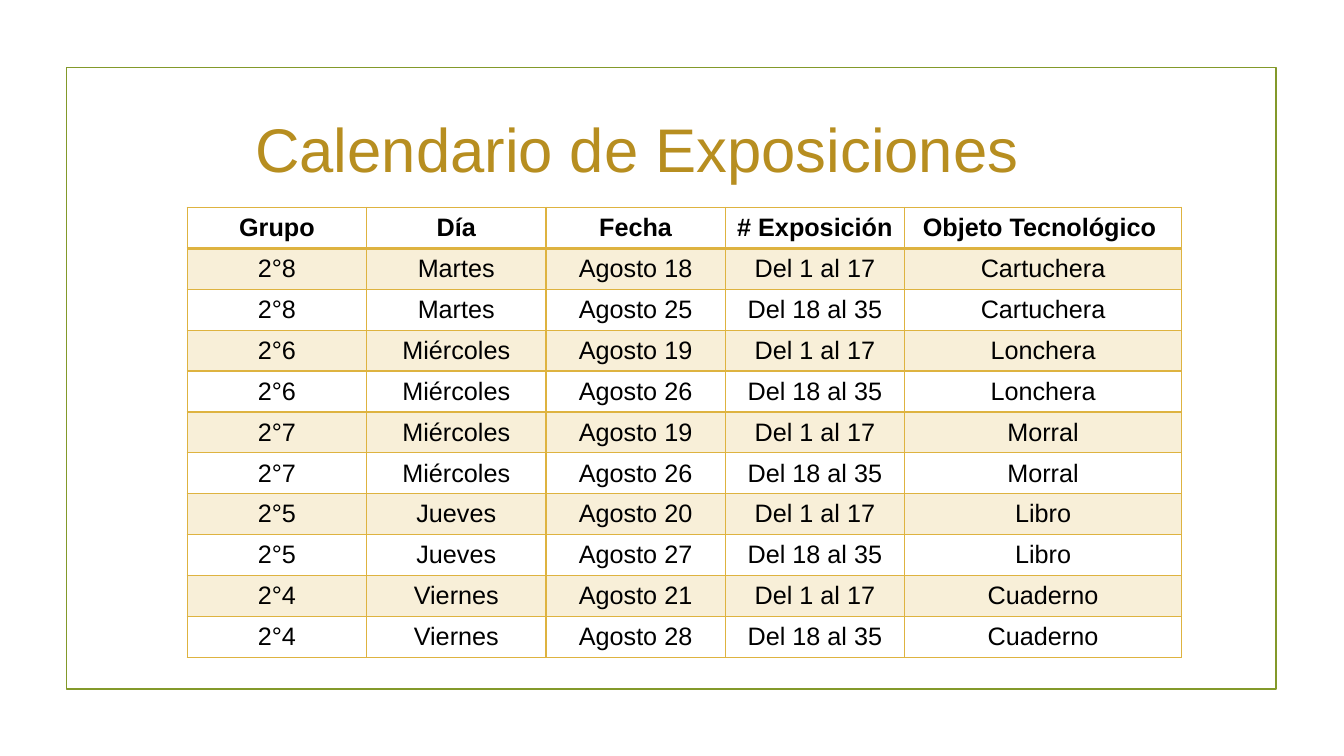
from dataclasses import dataclass

from lxml import etree
from pptx import Presentation
from pptx.dml.color import RGBColor
from pptx.enum import shapes, text
from pptx.oxml.ns import qn
from pptx.util import Cm, Pt

COLORS = {"frame": "83992A", "title": "B78E20", "gold": "DEB340", "text": "000000"}
FONT = "Arial"
HEADS = ("Grupo", "Día", "Fecha", "# Exposición", "Objeto Tecnológico ")
WIDTHS = (4.52, 4.52, 4.52, 4.52, 6.98)
ROW_H = 1.03
TURNS = ((0, "Del 1 al 17"), (7, "Del 18 al 35"))


@dataclass
class Group:
    name: str
    day: str
    date: int
    item: str


GROUPS = (
    Group("2°8", "Martes", 18, "Cartuchera"),
    Group("2°6", "Miércoles", 19, "Lonchera"),
    Group("2°7", "Miércoles", 19, "Morral"),
    Group("2°5", "Jueves", 20, "Libro"),
    Group("2°4", "Viernes", 21, "Cuaderno"),
)


def color(key: str) -> RGBColor:
    return RGBColor.from_string(COLORS[key])


def style(para, size: float, key: str, bold: bool = False) -> None:
    para.alignment = text.PP_ALIGN.CENTER
    para.font.name = FONT
    para.font.size = Pt(size)
    para.font.bold = bold
    para.font.color.rgb = color(key)


def add_edges(cell, top: float, bottom: float) -> None:
    """Draw the four cell borders, one point wide at the sides."""
    props = cell._tc.get_or_add_tcPr()
    edges = (("lnL", 1), ("lnR", 1), ("lnT", top), ("lnB", bottom))
    for spot, (tag, width) in enumerate(edges):
        line = etree.Element(qn(f"a:{tag}"), w=str(Pt(width)))
        fill = etree.SubElement(line, qn("a:solidFill"))
        etree.SubElement(fill, qn("a:srgbClr"), val=COLORS["gold"])
        props.insert(spot, line)


def shade(cell, band: bool) -> None:
    """Tint a banded cell with gold at 20 % opacity; leave others clear."""
    if not band:
        cell.fill.background()
        return
    cell.fill.solid()
    cell.fill.fore_color.rgb = color("gold")
    tint = cell._tc.tcPr.find(f".//{qn('a:solidFill')}/{qn('a:srgbClr')}")
    etree.SubElement(tint, qn("a:alpha"), val="20000")


def add_frame(slide) -> None:
    frame = slide.shapes.add_shape(
        shapes.MSO_SHAPE.RECTANGLE, Cm(1.68), Cm(1.7), Cm(30.48), Cm(15.67))
    frame.shadow.inherit = False
    frame.fill.background()
    frame.line.color.rgb = color("frame")
    frame.line.width = Pt(1.25)


def set_title(slide) -> None:
    title = slide.shapes.title
    title.left, title.top = Cm(5.38), Cm(2.54)
    title.width, title.height = Cm(21.36), Cm(2.39)
    title.text_frame.text = "Calendario de Exposiciones"
    title.text_frame.vertical_anchor = text.MSO_ANCHOR.MIDDLE
    style(title.text_frame.paragraphs[0], 44, "title")


def add_calendar(slide) -> None:
    rows = [HEADS] + [
        (group.name, group.day, f"Agosto {group.date + delay}", turn, group.item)
        for group in GROUPS for delay, turn in TURNS]
    table = slide.shapes.add_table(
        len(rows), len(HEADS), Cm(4.72), Cm(5.23),
        Cm(sum(WIDTHS)), Cm(ROW_H * len(rows))).table
    table.first_row = True
    table.horz_banding = False
    for col, width in zip(table.columns, WIDTHS):
        col.width = Cm(width)
    for r, row in enumerate(rows):
        table.rows[r].height = Cm(ROW_H)
        for c, words in enumerate(row):
            cell = table.cell(r, c)
            cell.text = words
            cell.vertical_anchor = text.MSO_ANCHOR.MIDDLE
            style(cell.text_frame.paragraphs[0], 18, "text", bold=r == 0)
            shade(cell, band=r % 2 == 1)
            add_edges(cell, top=2 if r == 1 else 1, bottom=2 if r == 0 else 1)


def main() -> None:
    deck = Presentation()
    deck.slide_width, deck.slide_height = Cm(33.87), Cm(19.05)
    slide = deck.slides.add_slide(deck.slide_layouts[5])
    add_frame(slide)
    set_title(slide)
    add_calendar(slide)
    deck.save("out.pptx")


if __name__ == "__main__":
    main()
